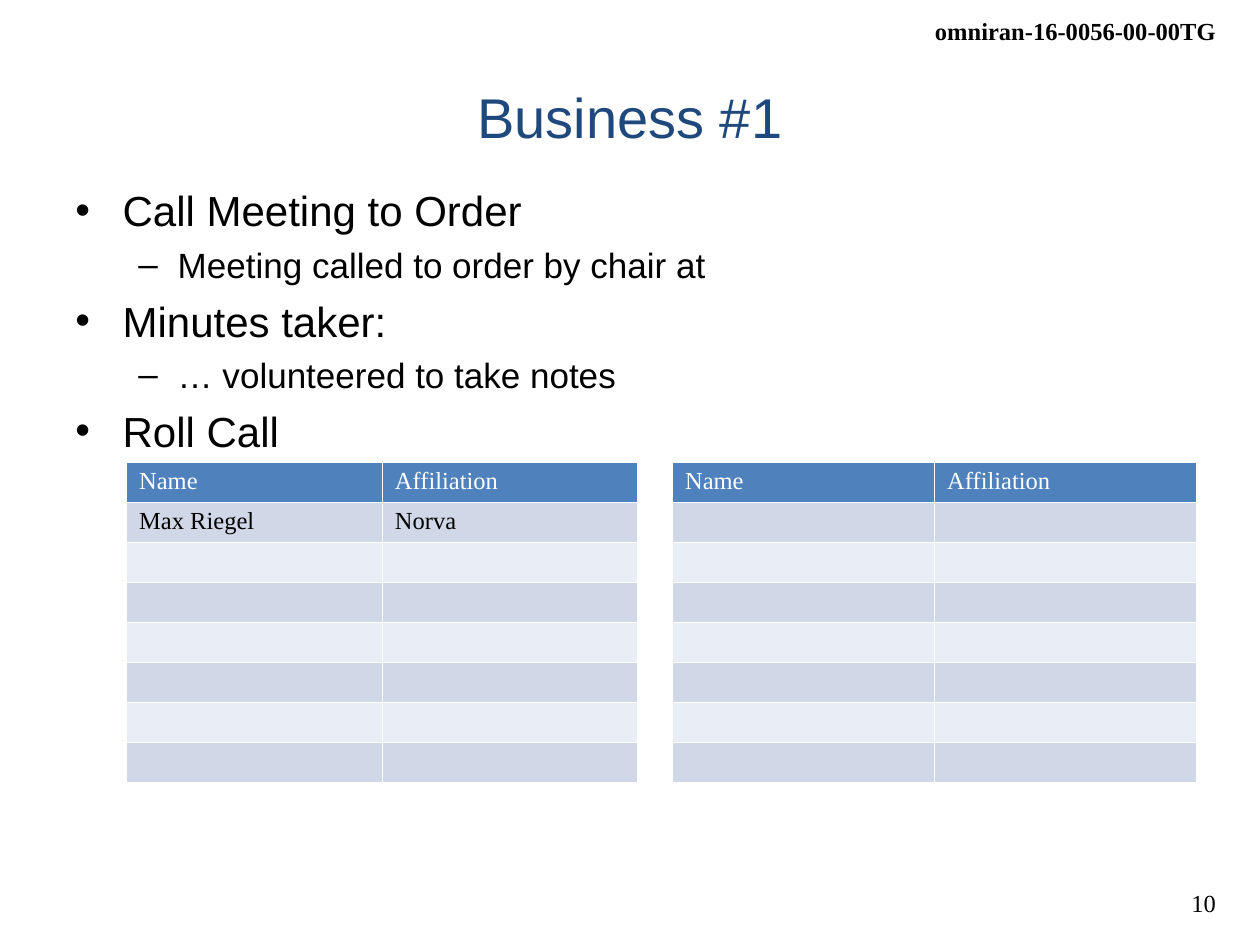
from lxml.etree import SubElement
from pptx import Presentation
from pptx.dml.color import RGBColor
from pptx.enum.text import MSO_ANCHOR, PP_ALIGN
from pptx.oxml.ns import qn
from pptx.util import Pt

BLACK = RGBColor(0x00, 0x00, 0x00)
WHITE = RGBColor(0xFF, 0xFF, 0xFF)
NAVY = RGBColor(0x1F, 0x49, 0x7D)
BLUE = RGBColor(0x4F, 0x81, 0xBD)
BANDS = (RGBColor(0xE9, 0xED, 0xF4), RGBColor(0xD0, 0xD8, 0xE8))
SANS, SERIF = "Arial", "Times New Roman"

# Per level: bullet, size, left edge, hanging indent, space before
LEVELS = (("•", 24, 27, 27, 5.5), ("–", 20, 58.5, 22.5, 4.6))


class Deck:
    def __init__(self, wide, high):
        self.prs = Presentation()
        self.prs.slide_width, self.prs.slide_height = Pt(wide), Pt(high)
        self.slide = self.prs.slides.add_slide(self.prs.slide_layouts[5])

    def style(self, para, name, size, color, bold=False):
        font = para.font
        font.name, font.size, font.bold = name, Pt(size), bold
        font.color.rgb = color

    def title(self, text, left, top, wide, high):
        shape = self.slide.shapes.title
        shape.left, shape.top = Pt(left), Pt(top)
        shape.width, shape.height = Pt(wide), Pt(high)
        frame = shape.text_frame
        frame.text = text
        frame.vertical_anchor = MSO_ANCHOR.MIDDLE
        para = frame.paragraphs[0]
        para.alignment = PP_ALIGN.CENTER
        self.style(para, SANS, 32, NAVY)

    def box(self, left, top, wide, high, wrap=True):
        area = Pt(left), Pt(top), Pt(wide), Pt(high)
        frame = self.slide.shapes.add_textbox(*area).text_frame
        frame.word_wrap = wrap
        return frame

    def label(self, text, left, top, wide, high, bold=False):
        para = self.box(left, top, wide, high, False).paragraphs[0]
        para.text = text
        para.alignment = PP_ALIGN.RIGHT
        self.style(para, SERIF, 14, BLACK, bold)

    def bullets(self, items, left, top, wide, high):
        frame = self.box(left, top, wide, high)
        for i, (level, text) in enumerate(items):
            mark, size, edge, hang, gap = LEVELS[level]
            para = frame.add_paragraph() if i else frame.paragraphs[0]
            para.text, para.level = text, level
            props = para._p.get_or_add_pPr()
            props.set("marL", str(Pt(edge)))
            props.set("indent", str(-Pt(hang)))
            SubElement(props, qn("a:buFont"), typeface=SANS)
            SubElement(props, qn("a:buChar"), char=mark)
            if i:
                para.space_before = Pt(gap)
            self.style(para, SANS, size, BLACK)

    def cell(self, cell, text, fill, color):
        cell.margin_top = cell.margin_bottom = Pt(3)
        props = cell._tc.get_or_add_tcPr()
        for side in ("lnL", "lnR", "lnT", "lnB"):
            line = SubElement(props, qn("a:" + side), w=str(Pt(1)))
            paint = SubElement(line, qn("a:solidFill"))
            SubElement(paint, qn("a:srgbClr"), val=str(WHITE))
        cell.fill.solid()
        cell.fill.fore_color.rgb = fill
        para = cell.text_frame.paragraphs[0]
        if text:
            para.text = text
        self.style(para, SERIF, 14, color)
        if not text:  # keeps blank rows as low as the others
            SubElement(para._p, qn("a:endParaRPr"), sz="1400")

    def table(self, rows, count, left, top, cols, high, gap):
        area = Pt(left), Pt(top), Pt(sum(cols)), Pt(high * count)
        table = self.slide.shapes.add_table(count, len(cols), *area).table
        for col, wide in zip(table.columns, cols):
            col.width = Pt(wide)
        for r, row in enumerate(table.rows):
            row.height = Pt(high)
            texts = rows[r] if r < len(rows) else [""] * len(cols)
            for c, text in enumerate(texts):
                fill = WHITE if c == gap else BANDS[r % 2] if r else BLUE
                self.cell(row.cells[c], text, fill, BLACK if r else WHITE)


def main():
    deck = Deck(720, 540)

    # Header and page number
    deck.label("omniran-16-0056-00-00TG", 525.6, 5.8, 176.4, 24.5, True)
    deck.label("10", 671, 504, 31, 24.5)

    # Title and agenda
    deck.title("Business #1", 36, 21.6, 648, 90)
    deck.bullets([
        (0, "Call Meeting to Order"),
        (1, "Meeting called to order by chair at"),
        (0, "Minutes taker:"),
        (1, "… volunteered to take notes"),
        (0, "Roll Call"),
    ], 36, 102.2, 648, 203.8)

    # Roll call: two lists with a blank column between
    head = ["Name", "Affiliation"]
    rows = [head + [""] + head, ["Max Riegel", "Norva", "", "", ""]]
    deck.table(rows, 8, 72.3, 264.3, (146.2, 146.2, 19.6, 149.8, 149.8), 22.9, 2)

    deck.prs.save("out.pptx")


if __name__ == "__main__":
    main()
